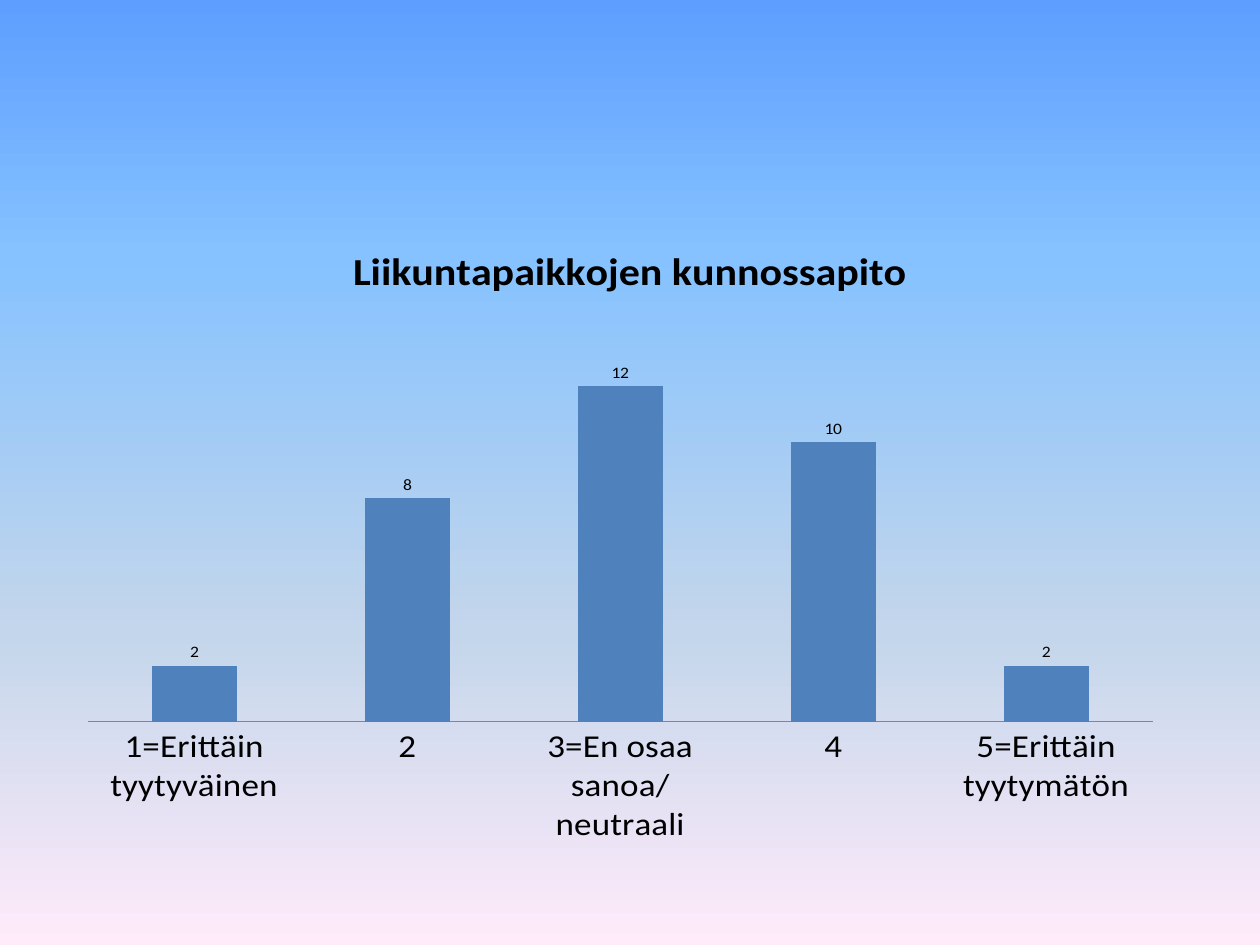
from dataclasses import dataclass

from lxml.etree import SubElement
from pptx import Presentation
from pptx.chart.data import CategoryChartData
from pptx.dml.color import RGBColor
from pptx.enum.chart import XL_CHART_TYPE, XL_LABEL_POSITION, XL_TICK_MARK
from pptx.oxml.ns import qn
from pptx.util import Cm, Pt


@dataclass(frozen=True)
class Theme:
    font: str = "Calibri"
    text: str = "000000"
    bar: str = "4F81BD"
    axis: str = "868686"
    background: tuple = ((0, "5E9EFF"), (27, "85C2FF"), (67, "C4D6EB"), (100, "FFEBFA"))
    title_size: int = 24
    category_size: int = 20
    label_size: int = 10


@dataclass(frozen=True)
class Box:
    left: float
    top: float
    width: float
    height: float


THEME = Theme()
TITLE = "Liikuntapaikkojen kunnossapito"
ANSWERS = {
    "1=Erittäin tyytyväinen": 2,
    "2": 8,
    "3=En osaa sanoa/neutraali": 12,
    "4": 10,
    "5=Erittäin tyytymätön": 2,
}
PLOT_LAYOUT = {"x": 0.022, "y": 0.194, "w": 0.939, "h": 0.69}


def style_font(font, size, bold=False):
    font.name = THEME.font
    font.size = Pt(size)
    font.bold = bold
    font.color.rgb = RGBColor.from_string(THEME.text)


def paint_background(page):
    fill = page.background.fill
    fill.gradient()
    fill.gradient_angle = 270
    stops = page.background._cSld.find(".//" + qn("a:gsLst"))
    stops.clear()
    for percent, color in THEME.background:
        stop = SubElement(stops, qn("a:gs"), pos=str(percent * 1000))
        SubElement(stop, qn("a:srgbClr"), val=color)


def place_plot(chart, layout):
    """Fix the inner plot area, given as fractions of the chart."""
    plot_area = chart.plots[0]._element.getparent()
    holder = plot_area.find(qn("c:layout"))
    if holder is None:
        holder = plot_area.makeelement(qn("c:layout"))
        plot_area.insert(0, holder)
    manual = SubElement(holder, qn("c:manualLayout"))
    settings = {"layoutTarget": "inner", "xMode": "edge", "yMode": "edge", **layout}
    for name, value in settings.items():
        SubElement(manual, qn(f"c:{name}"), val=str(value))


def style_axes(chart):
    categories = chart.category_axis
    categories.major_tick_mark = XL_TICK_MARK.NONE
    categories.minor_tick_mark = XL_TICK_MARK.NONE
    categories.format.line.color.rgb = RGBColor.from_string(THEME.axis)
    style_font(categories.tick_labels.font, THEME.category_size)
    chart.value_axis.visible = False
    chart.value_axis.has_major_gridlines = False


def style_bars(plot):
    plot.gap_width = 150
    plot.overlap = -25
    plot.vary_by_categories = False
    fill = plot.series[0].format.fill
    fill.solid()
    fill.fore_color.rgb = RGBColor.from_string(THEME.bar)
    plot.has_data_labels = True
    labels = plot.data_labels
    labels.show_value = True
    labels.position = XL_LABEL_POSITION.OUTSIDE_END
    style_font(labels.font, THEME.label_size)


def add_answer_chart(page, box):
    data = CategoryChartData()
    data.categories = ANSWERS.keys()
    data.add_series("Series 1", ANSWERS.values())
    chart = page.shapes.add_chart(
        XL_CHART_TYPE.COLUMN_CLUSTERED,
        Cm(box.left), Cm(box.top), Cm(box.width), Cm(box.height), data,
    ).chart
    style_font(chart.font, THEME.label_size)
    chart.has_legend = False
    chart.has_title = True
    title = chart.chart_title
    title.include_in_layout = False
    title.text_frame.text = TITLE
    style_font(title.text_frame.paragraphs[0].runs[0].font, THEME.title_size, bold=True)
    style_axes(chart)
    style_bars(chart.plots[0])
    place_plot(chart, PLOT_LAYOUT)


def main():
    deck = Presentation()
    deck.slide_width, deck.slide_height = Cm(25.4), Cm(19.05)
    page = deck.slides.add_slide(deck.slide_layouts[6])
    paint_background(page)
    add_answer_chart(page, Box(1.27, 4.45, 22.86, 12.57))
    deck.save("out.pptx")


if __name__ == "__main__":
    main()
